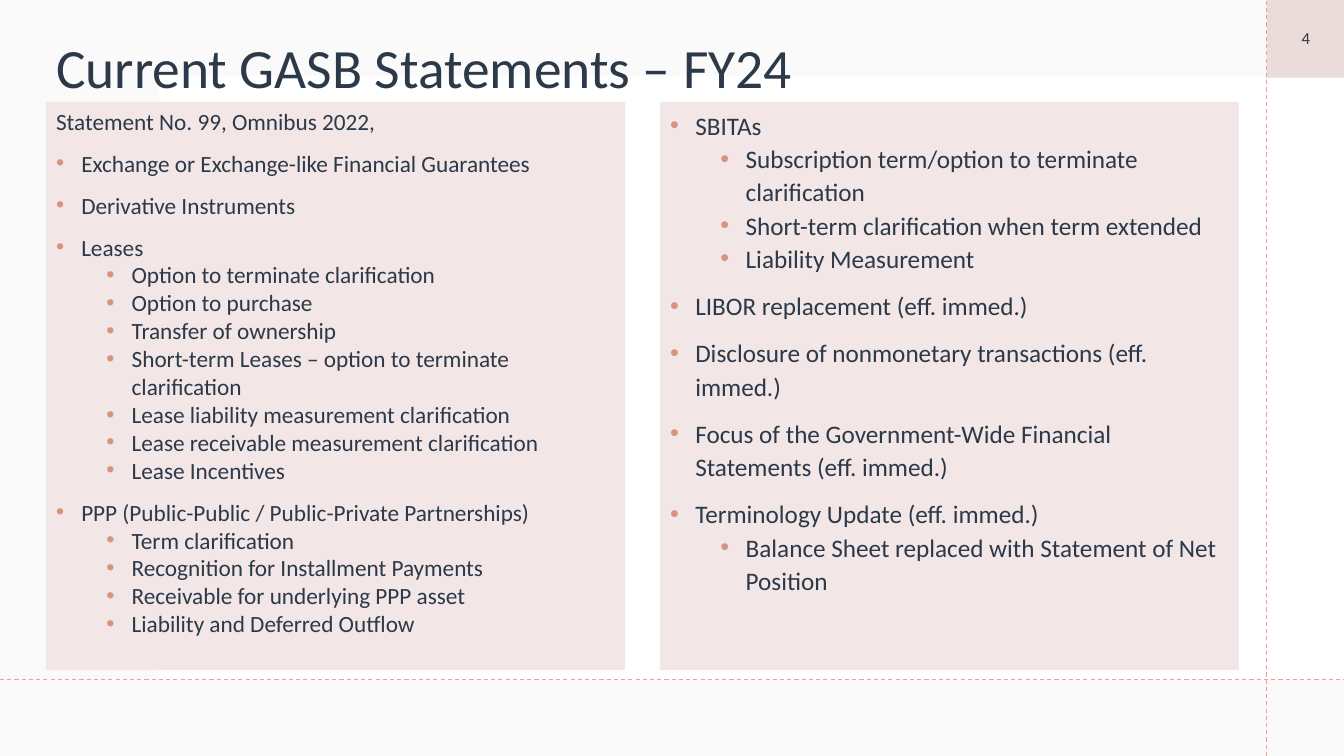
from lxml import etree
from pptx import Presentation
from pptx.dml.color import RGBColor
from pptx.enum.dml import MSO_LINE
from pptx.enum.shapes import MSO_CONNECTOR, MSO_SHAPE
from pptx.enum.text import MSO_ANCHOR, MSO_AUTO_SIZE, PP_ALIGN
from pptx.oxml.ns import qn
from pptx.util import Pt

RECTANGLE = MSO_SHAPE.RECTANGLE
STRAIGHT = MSO_CONNECTOR.STRAIGHT
DASH = MSO_LINE.DASH
MIDDLE, TOP = MSO_ANCHOR.MIDDLE, MSO_ANCHOR.TOP
LEFT, CENTER = PP_ALIGN.LEFT, PP_ALIGN.CENTER
NO_AUTOFIT = MSO_AUTO_SIZE.NONE

EMU_PER_PX = 914400 / 100.8
WIDTH, HEIGHT = 1344, 756
COLUMN_TOP, COLUMN_WIDTH, COLUMN_HEIGHT = 102, 579, 568
GUIDE_X, GUIDE_Y = 1267, 680
FONT = "Calibri"
INK, BULLET, GUIDE, PANEL = "2C3948", "D6947C", "F49D90", "F2E6E6"

# Each entry is (outline level, text); level 0 has no bullet.
LEFT_ITEMS = [
    (0, "Statement No. 99, Omnibus 2022,"),
    (1, "Exchange or Exchange-like Financial Guarantees"),
    (1, "Derivative Instruments"),
    (1, "Leases"),
    (2, "Option to terminate clarification"),
    (2, "Option to purchase"),
    (2, "Transfer of ownership"),
    (2, "Short-term Leases – option to terminate clarification"),
    (2, "Lease liability measurement clarification"),
    (2, "Lease receivable measurement clarification"),
    (2, "Lease Incentives"),
    (1, "PPP (Public-Public / Public-Private Partnerships)"),
    (2, "Term clarification"),
    (2, "Recognition for Installment Payments"),
    (2, "Receivable for underlying PPP asset"),
    (2, "Liability and Deferred Outflow"),
]
RIGHT_ITEMS = [
    (1, "SBITAs"),
    (2, "Subscription term/option to terminate clarification"),
    (2, "Short-term clarification when term extended"),
    (2, "Liability Measurement"),
    (1, "LIBOR replacement (eff. immed.)"),
    (1, "Disclosure of nonmonetary transactions (eff. immed.)"),
    (1, "Focus of the Government-Wide Financial Statements (eff. immed.)"),
    (1, "Terminology Update (eff. immed.)"),
    (2, "Balance Sheet replaced with Statement of Net Position"),
]


def px(*lengths):
    return [round(length * EMU_PER_PX) for length in lengths]


def color(hex_string):
    return RGBColor.from_string(hex_string)


def add_rectangle(page, bounds, fill, opacity=100):
    box = page.shapes.add_shape(RECTANGLE, *px(*bounds))
    box.shadow.inherit = False
    box.line.fill.background()
    box.fill.solid()
    box.fill.fore_color.rgb = color(fill)
    if opacity < 100:
        rgb = box.fill._xPr.find(".//" + qn("a:srgbClr"))
        etree.SubElement(rgb, qn("a:alpha"), val=str(opacity * 1000))
    return box


def add_guide(page, ends):
    guide = page.shapes.add_connector(STRAIGHT, *px(*ends))
    guide.line.color.rgb = color(GUIDE)
    guide.line.width = Pt(0.75)
    guide.line.dash_style = DASH
    etree.SubElement(guide._element.spPr, qn("a:effectLst"))


def place_placeholder(page, holder, bounds, anchor):
    """Move a placeholder to its bounds, in front of the decoration."""
    holder.left, holder.top, holder.width, holder.height = px(*bounds)
    page.shapes._spTree.append(holder._element)
    frame = holder.text_frame
    frame.word_wrap = True
    frame.auto_size = NO_AUTOFIT
    frame.vertical_anchor = anchor
    return frame


def format_paragraph(para, size, align, line_spacing=1.0, space_before=0):
    para.alignment = align
    para.line_spacing = line_spacing
    para.space_before = Pt(space_before)
    para.space_after = Pt(0)
    for span in para.runs:
        span.font.name = FONT
        span.font.size = Pt(size)
        span.font.color.rgb = color(INK)


def set_bullet(para, level):
    properties = para._p.get_or_add_pPr()
    if level == 0:
        properties.set("marL", "0")
        properties.set("indent", "0")
        etree.SubElement(properties, qn("a:buNone"))
        return
    para.level = level
    properties.set("marL", str(Pt(36 * level * (level + 1) // 4)
                               if level == 1 else Pt(54)))
    properties.set("indent", str(-Pt(18)))
    tint = etree.SubElement(properties, qn("a:buClr"))
    etree.SubElement(tint, qn("a:srgbClr"), val=BULLET)
    etree.SubElement(properties, qn("a:buFont"), typeface="Arial")
    etree.SubElement(properties, qn("a:buChar"), char="•")


def fill_column(page, holder, left, items, size, line_spacing):
    bounds = (left, COLUMN_TOP, COLUMN_WIDTH, COLUMN_HEIGHT)
    frame = place_placeholder(page, holder, bounds, TOP)
    holder.fill.solid()
    holder.fill.fore_color.rgb = color(PANEL)
    frame.text = "\n".join(text for _, text in items)
    for para, (level, _) in zip(frame.paragraphs, items):
        format_paragraph(para, size, LEFT, line_spacing, 0 if level == 2 else 10)
        set_bullet(para, level)


def add_page_number(page, number):
    box = page.shapes.add_textbox(*px(1268, 0, 76, 76))
    frame = box.text_frame
    frame.word_wrap = True
    frame.vertical_anchor = MIDDLE
    frame.text = number
    format_paragraph(frame.paragraphs[0], 12, CENTER)


def main():
    deck = Presentation()
    deck.slide_width, deck.slide_height = px(WIDTH, HEIGHT)
    page = deck.slides.add_slide(deck.slide_layouts.get_by_name("Two Content"))
    title, left_body, right_body = page.placeholders

    add_rectangle(page, (0, 0, WIDTH, HEIGHT), "F4F4F4", 45)
    add_rectangle(page, (159, 76, WIDTH - 159, GUIDE_Y - 76), "FFFFFF")
    add_guide(page, (GUIDE_X, HEIGHT, GUIDE_X, 0))
    add_guide(page, (0, GUIDE_Y, WIDTH, GUIDE_Y))
    add_rectangle(page, (GUIDE_X, 0, WIDTH - GUIDE_X, 78), "BF8484", 25)

    frame = place_placeholder(page, title, (46, 40, 1175, 61), MIDDLE)
    frame.text = "Current GASB Statements – FY24"
    format_paragraph(frame.paragraphs[0], 39.6, LEFT, 0.9)
    add_page_number(page, "4")
    fill_column(page, left_body, 46, LEFT_ITEMS, 16.6, 1.0)
    fill_column(page, right_body, 660, RIGHT_ITEMS, 18, 1.1)
    deck.save("out.pptx")


if __name__ == "__main__":
    main()
